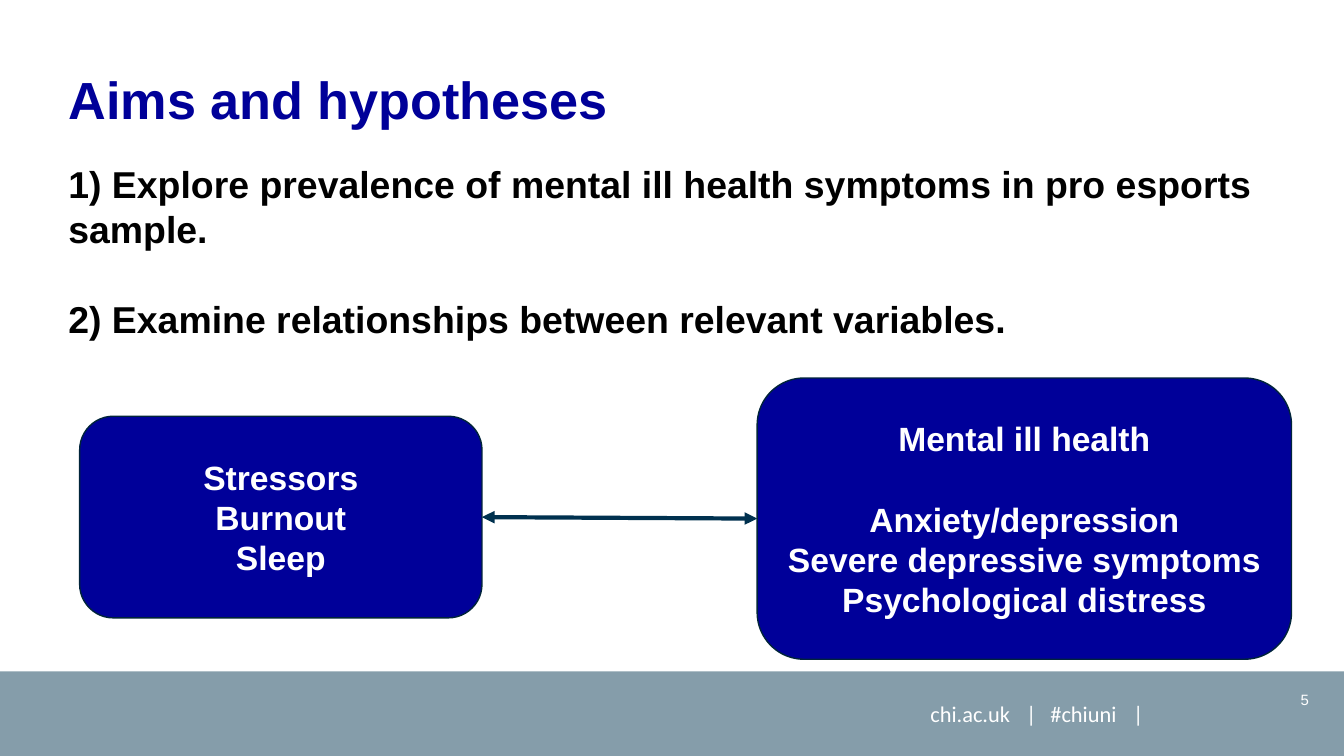
"""Build the slide on aims and hypotheses of the esports study."""
from pptx import Presentation
from pptx.dml.color import RGBColor
from pptx.enum.shapes import MSO_CONNECTOR as LINK, MSO_SHAPE as SHAPE
from pptx.enum.text import MSO_ANCHOR as ANCHOR, PP_ALIGN as ALIGN
from pptx.oxml.ns import qn
from pptx.util import Inches, Pt
from lxml.etree import SubElement as Sub

NAVY = RGBColor(0x00, 0x00, 0x99)
EDGE = RGBColor(0x00, 0x24, 0x3A)
TEAL = RGBColor(0x00, 0x31, 0x4F)
SLATE = RGBColor(0x85, 0x9D, 0xAA)
WHITE = RGBColor(0xFF, 0xFF, 0xFF)
BLACK = RGBColor(0x00, 0x00, 0x00)

TITLE = "Aims and hypotheses"
AIMS = [
    ("1) Explore prevalence of mental ill health symptoms in pro esports sample.", 0),
    ("2) Examine relationships between relevant variables.", 32),
]
FACTORS = [("Stressors", 0), ("Burnout", 0), ("Sleep", 0)]
OUTCOMES = [
    ("Mental ill health", 0),
    ("Anxiety/depression", 28.8),
    ("Severe depressive symptoms", 0),
    ("Psychological distress", 0),
]
FOOTER = "chi.ac.uk\t|\t#chiuni\t|"
STOPS = [0.95, 1.19, 2.01]
NUMBER = "5"


def write(frame, lines, size, color, bold=True, align=ALIGN.LEFT, face="Arial", stops=()):
    """Fill a text frame with (text, space before) lines."""
    frame.word_wrap = True
    for i, (text, gap) in enumerate(lines):
        para = frame.add_paragraph() if i else frame.paragraphs[0]
        para.alignment = align
        if gap:
            para.space_before = Pt(gap)
        if stops:
            tabs = Sub(para._p.get_or_add_pPr(), qn("a:tabLst"))
            for stop in stops:
                Sub(tabs, qn("a:tab"), pos=str(Inches(stop)), algn="l")
        run = para.add_run()
        run.text = text
        font = run.font
        font.name, font.size, font.bold = face, Pt(size), bold
        font.color.rgb = color


def label(slide, box, lines, size, color, **style):
    """Add a text box."""
    area = slide.shapes.add_textbox(*map(Inches, box))
    write(area.text_frame, lines, size, color, **style)


def block(slide, kind, box, fill):
    """Add a filled shape without outline or shadow."""
    shape = slide.shapes.add_shape(kind, *map(Inches, box))
    shape.shadow.inherit = False
    shape.fill.solid()
    shape.fill.fore_color.rgb = fill
    shape.line.fill.background()
    return shape


def card(slide, box, lines):
    """Add a rounded box of variables."""
    shape = block(slide, SHAPE.ROUNDED_RECTANGLE, box, NAVY)
    shape.line.color.rgb = EDGE
    shape.line.width = Pt(1)
    shape.text_frame.vertical_anchor = ANCHOR.MIDDLE
    write(shape.text_frame, lines, 24, WHITE, align=ALIGN.CENTER)
    return shape


def join(slide, left, right):
    """Link two cards with a two-headed arrow."""
    arrow = slide.shapes.add_connector(LINK.STRAIGHT, 0, 0, 0, 0)
    arrow.begin_connect(left, 3)
    arrow.end_connect(right, 1)
    arrow.line.color.rgb = TEAL
    arrow.line.width = Pt(3)
    line = arrow.line._get_or_add_ln()
    for end in ("a:headEnd", "a:tailEnd"):
        Sub(line, qn(end), type="triangle")
    Sub(arrow._element.spPr, qn("a:effectLst"))


def main():
    """Build and save the slide."""
    deck = Presentation()
    deck.slide_width, deck.slide_height = Inches(13.33), Inches(7.5)
    slide = deck.slides.add_slide(deck.slide_layouts[6])
    block(slide, SHAPE.RECTANGLE, (0, 6.66, 13.33, 0.84), SLATE)
    label(slide, (9.13, 6.9, 2.4, 0.35), [(FOOTER, 0)], 16, WHITE,
          bold=False, face="Calibri", stops=STOPS)
    label(slide, (0.58, 0.62, 12.18, 1.13), [(TITLE, 0)], 37.3, NAVY)
    label(slide, (12.6, 6.8, 0.68, 0.28), [(NUMBER, 0)], 10.7, WHITE,
          bold=False, align=ALIGN.CENTER)
    left = card(slide, (0.79, 4.13, 3.99, 2), FACTORS)
    right = card(slide, (7.51, 3.75, 5.3, 2.79), OUTCOMES)
    label(slide, (0.58, 1.55, 12.6, 2.35), AIMS, 26.7, BLACK)
    join(slide, left, right)
    deck.save("out.pptx")


if __name__ == "__main__":
    main()
